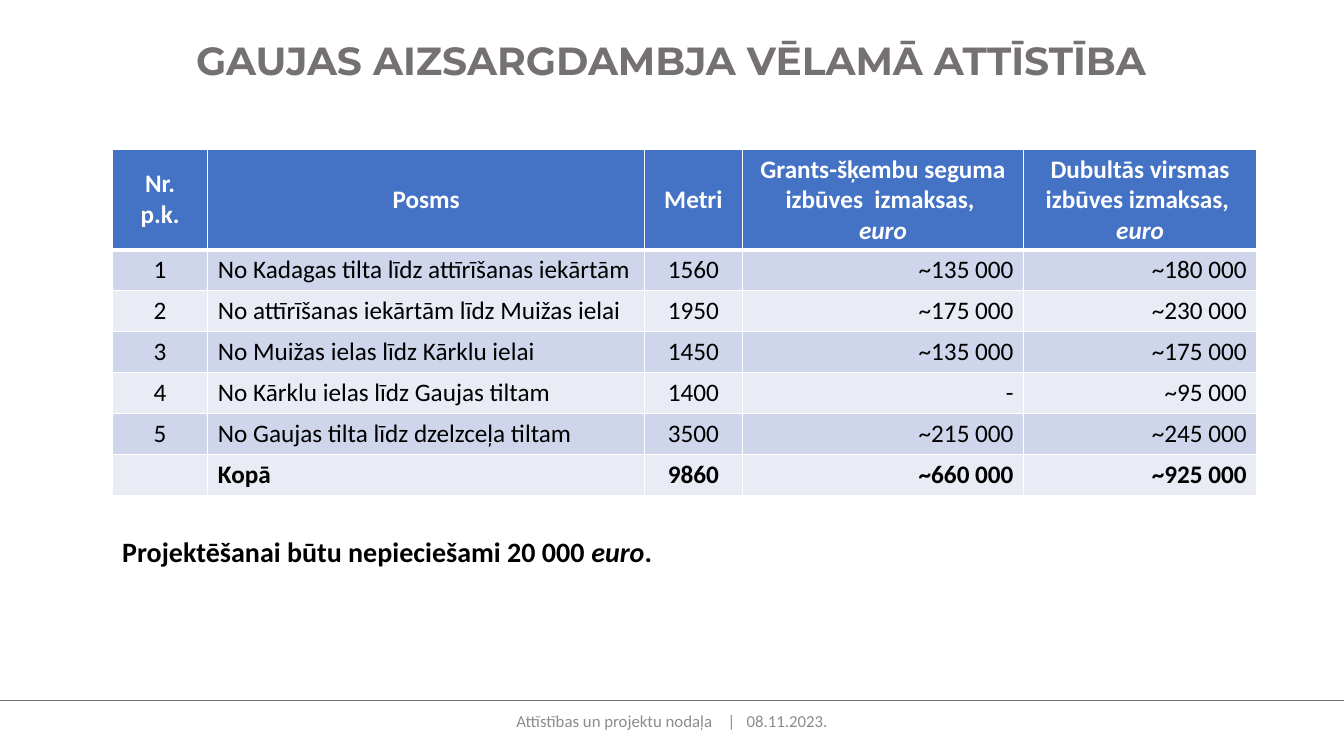
from lxml.etree import SubElement
from pptx import Presentation
from pptx.dml.color import RGBColor
from pptx.enum.shapes import MSO_CONNECTOR as CONN
from pptx.enum.text import MSO_ANCHOR as ANCHOR, PP_ALIGN as ALIGN
from pptx.oxml.ns import qn
from pptx.util import Emu, Pt

WHITE, BLACK, GREY, FOOTER_GREY = "FFFFFF", "000000", "767171", "8C8C8C"
HEADER_FILL, BANDS = "4472C4", ("CFD5EA", "E9EBF5")
COL_WIDTHS = (91, 416, 93, 268, 222)
HEADER_HEIGHT, ROW_HEIGHT = 94, 39
ALIGNS = (ALIGN.CENTER, ALIGN.LEFT, ALIGN.CENTER, ALIGN.RIGHT, ALIGN.RIGHT)

HEADERS = (
    ("Nr.", "p.k."),
    ("Posms",),
    ("Metri",),
    ("Grants-šķembu seguma izbūves  izmaksas, ", "euro"),
    ("Dubultās virsmas izbūves izmaksas, ", "euro"),
)
ROWS = (
    ("1", "No Kadagas tilta līdz attīrīšanas iekārtām", "1560", "~135 000", "~180 000"),
    ("2", "No attīrīšanas iekārtām līdz Muižas ielai", "1950", "~175 000", "~230 000"),
    ("3", "No Muižas ielas līdz Kārklu ielai", "1450", "~135 000", "~175 000"),
    ("4", "No Kārklu ielas līdz Gaujas tiltam", "1400", "-", "~95 000"),
    ("5", "No Gaujas tilta līdz dzelzceļa tiltam", "3500", "~215 000", "~245 000"),
    ("", "Kopā", "9860", "~660 000", "~925 000"),
)


def px(n):
    return Emu(n * 9525)


def rgb(color):
    return RGBColor.from_string(color)


def add_run(p, text, size=18, color=BLACK, font="Calibri", bold=False, italic=False, spacing=0):
    r = p.add_run()
    r.text = text
    r.font.name, r.font.size = font, Pt(size)
    r.font.bold, r.font.italic = bold, italic
    r.font.color.rgb = rgb(color)
    if spacing:
        r.font._element.set("spc", str(spacing))


def add_text(s, x, y, w, h, align, anchor=ANCHOR.TOP):
    tf = s.shapes.add_textbox(px(x), px(y), px(w), px(h)).text_frame
    tf.word_wrap = True
    tf.vertical_anchor = anchor
    p = tf.paragraphs[0]
    p.alignment = align
    return p


def add_rule(s, y, width, color):
    line = s.shapes.add_connector(CONN.STRAIGHT, 0, px(y), px(width), px(y))
    line.line.color.rgb = rgb(color)
    line.line.width = Pt(0.5)
    SubElement(line._element.spPr, qn("a:effectLst"))


def style_cell(cell, fill, top=1, bottom=1):
    tcPr = cell._tc.get_or_add_tcPr()
    for side, width in (("L", 1), ("R", 1), ("T", top), ("B", bottom)):
        ln = SubElement(tcPr, qn(f"a:ln{side}"), w=str(Pt(width)))
        SubElement(SubElement(ln, qn("a:solidFill")), qn("a:srgbClr"), val=WHITE)
    cell.fill.solid()
    cell.fill.fore_color.rgb = rgb(fill)


def add_cost_table(s, x, y):
    height = HEADER_HEIGHT + ROW_HEIGHT * len(ROWS)
    table = s.shapes.add_table(len(ROWS) + 1, len(COL_WIDTHS), px(x), px(y),
                               px(sum(COL_WIDTHS)), px(height)).table
    table.first_row = table.horz_banding = False
    for col, width in zip(table.columns, COL_WIDTHS):
        col.width = px(width)
    for i, row in enumerate(table.rows):
        row.height = px(ROW_HEIGHT if i else HEADER_HEIGHT)

    for j, lines in enumerate(HEADERS):
        cell = table.cell(0, j)
        style_cell(cell, HEADER_FILL, bottom=3)
        cell.vertical_anchor = ANCHOR.MIDDLE
        tf = cell.text_frame
        for k, text in enumerate(lines):
            p = tf.add_paragraph() if k else tf.paragraphs[0]
            p.alignment = ALIGN.CENTER
            add_run(p, text, color=WHITE, bold=True, italic=text == "euro")

    for i, values in enumerate(ROWS, 1):
        for j, text in enumerate(values):
            cell = table.cell(i, j)
            style_cell(cell, BANDS[(i - 1) % 2], top=3 if i == 1 else 1)
            p = cell.text_frame.paragraphs[0]
            p.alignment = ALIGNS[j]
            if text:
                add_run(p, text, bold=i == len(ROWS))


def main():
    prs = Presentation()
    prs.slide_width, prs.slide_height = px(1280), px(720)
    s = prs.slides.add_slide(prs.slide_layouts[6])

    p = add_text(s, 424, 667, 432, 38, ALIGN.CENTER, ANCHOR.MIDDLE)
    for text, spacing in (("Attīstības un projektu nodaļa", 0), (" ", 810), ("|", 0),
                          (" ", 540), ("08.11.2023.", 0)):
        add_run(p, text, size=12, color=FOOTER_GREY, spacing=spacing)
    add_rule(s, 667, 1280, GREY)

    p = add_text(s, 42, 30, 1194, 55, ALIGN.CENTER)
    add_run(p, "GAUJAS AIZSARGDAMBJA VĒLAMĀ ATTĪSTĪBA", size=28, color=GREY,
            font="Montserrat", bold=True)

    add_cost_table(s, 107, 142)

    p = add_text(s, 107, 508, 734, 57, ALIGN.JUSTIFY)
    p.line_spacing, p.space_before, p.space_after = 0.9, Pt(10), Pt(6)
    for text in ("Projektēšanai būtu nepieciešami 20 000 ", "euro", "."):
        add_run(p, text, size=20, bold=True, italic=text == "euro")

    prs.save("out.pptx")


if __name__ == "__main__":
    main()
